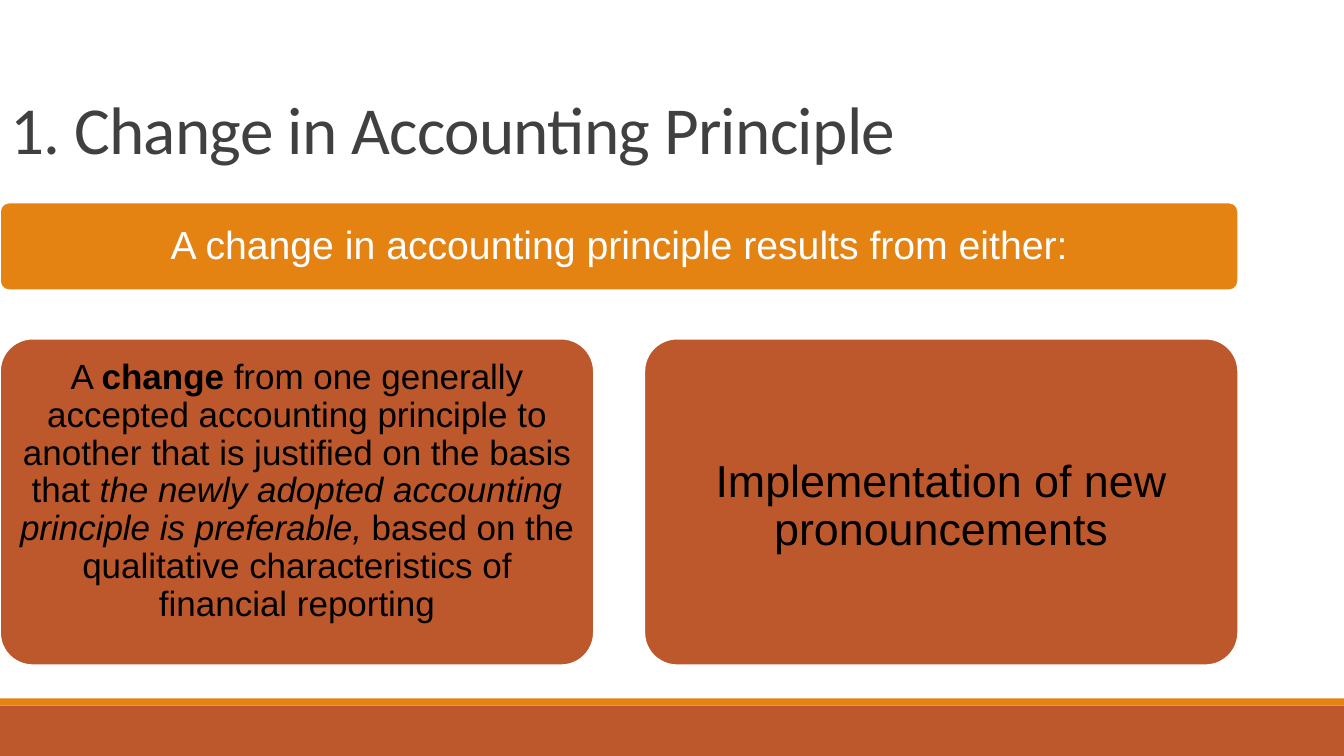
"""Build the slide on changes in accounting principle."""
import dataclasses

import pptx
import pptx.dml.color
import pptx.enum.shapes
import pptx.enum.text
import pptx.util

Inches, Pt = pptx.util.Inches, pptx.util.Pt
Kind = pptx.enum.shapes.MSO_SHAPE
Anchor = pptx.enum.text.MSO_ANCHOR


@dataclasses.dataclass(frozen=True)
class Theme:
    orange: str = "E48312"
    rust: str = "BD582C"
    white: str = "FFFFFF"
    black: str = "000000"
    gray: str = "404040"
    head: int = 48
    lead: int = 28
    body: int = 25
    big: int = 32


theme = Theme()


def block(slide, kind, box, fill):
    shape = slide.shapes.add_shape(kind, *map(Inches, box))
    shape.shadow.inherit = False
    shape.fill.solid()
    shape.fill.fore_color.rgb = pptx.dml.color.RGBColor.from_string(fill)
    shape.line.fill.background()
    return shape


def write(para, runs, face, size, color):
    for text, style in runs:
        run = para.add_run()
        run.text = text
        run.font.name = face
        run.font.size = Pt(size)
        run.font.bold = style == "bold"
        run.font.italic = style == "italic"
        run.font.color.rgb = pptx.dml.color.RGBColor.from_string(color)


deck = pptx.Presentation()
wide, high = 13.33, 7.5
deck.slide_width, deck.slide_height = Inches(wide), Inches(high)
slide = deck.slides.add_slide(deck.slide_layouts[5])

foot, strip = 0.5, 0.07
block(slide, Kind.RECTANGLE, (0, high - foot, wide, foot), theme.rust)
block(slide, Kind.RECTANGLE, (0, high - foot - strip, wide, strip), theme.orange)

title = slide.shapes.title
title.left, title.top = Inches(0), Inches(0)
title.width, title.height = Inches(12.29), Inches(1.72)
frame = title.text_frame
frame.auto_size = pptx.enum.text.MSO_AUTO_SIZE.NONE
frame.vertical_anchor = Anchor.BOTTOM
para = frame.paragraphs[0]
para.alignment = pptx.enum.text.PP_ALIGN.LEFT
para.line_spacing = 0.85
write(para, [("1. Change in Accounting Principle", "")], "Calibri", theme.head, theme.gray)
para.runs[0].font._element.set("spc", "-50")

span, gap = 12.28, 0.5
col = (span - gap) / 2
top, tall = 3.36, 3.24
pad = 0.1
lead = [("A change in accounting principle results from either:", "")]
reason = [
    ("A ", ""),
    ("change", "bold"),
    (" from one generally accepted accounting principle to another that is "
     "justified on the basis that ", ""),
    ("the newly adopted accounting principle is preferable,", "italic"),
    (" based on the qualitative characteristics of financial reporting", ""),
]
rules = [("Implementation of new pronouncements", "")]
cards = [
    ((0, 2.01, span, 0.87), theme.orange, lead, theme.lead, theme.white, Anchor.MIDDLE, pad),
    ((0, top, col, tall), theme.rust, reason, theme.body, theme.black, Anchor.TOP, 0.11),
    ((col + gap, top, col, tall), theme.rust, rules, theme.big, theme.black, Anchor.MIDDLE, 0.2),
]
for box, fill, runs, size, color, anchor, inset in cards:
    card = block(slide, Kind.ROUNDED_RECTANGLE, box, fill)
    card.adjustments[0] = 0.1
    card.line.color.rgb = pptx.dml.color.RGBColor.from_string(theme.white)
    card.line.width = Pt(1.25)
    frame = card.text_frame
    frame.word_wrap = True
    frame.vertical_anchor = anchor
    frame.margin_left = frame.margin_right = frame.margin_bottom = Inches(pad)
    frame.margin_top = Inches(inset)
    para = frame.paragraphs[0]
    para.alignment = pptx.enum.text.PP_ALIGN.CENTER
    para.line_spacing = 0.9
    write(para, runs, "Arial", size, color)

deck.save("out.pptx")
